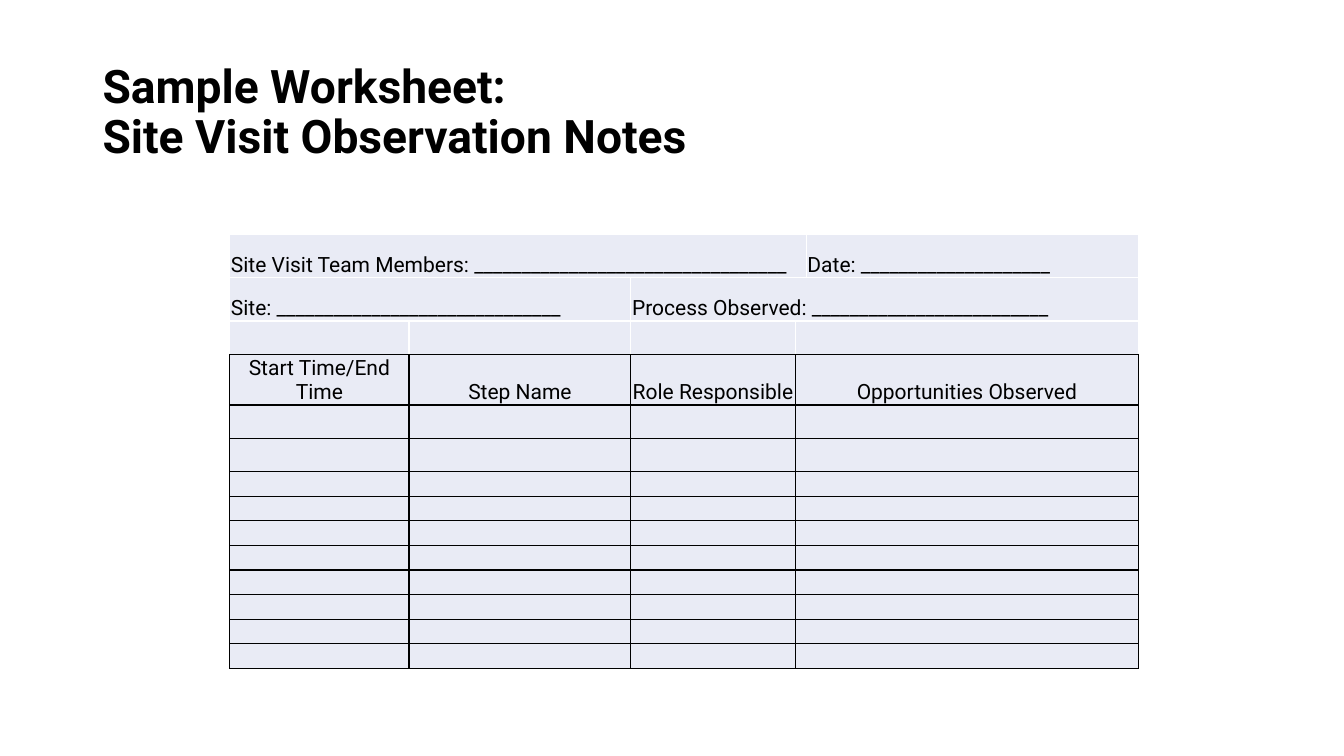
"""Build the site visit observation worksheet slide."""
from dataclasses import dataclass

from lxml import etree
from pptx import Presentation
from pptx.dml.color import RGBColor
from pptx.enum.text import MSO_ANCHOR, MSO_AUTO_SIZE, PP_ALIGN
from pptx.oxml.ns import qn
from pptx.slide import Slide
from pptx.table import Table, _Cell
from pptx.text.text import Font
from pptx.util import Cm, Pt

LEFT, CENTER = PP_ALIGN.LEFT, PP_ALIGN.CENTER
MIDDLE, BOTTOM = MSO_ANCHOR.MIDDLE, MSO_ANCHOR.BOTTOM
NO_FIT = MSO_AUTO_SIZE.NONE
BLACK = RGBColor(0x00, 0x00, 0x00)
WHITE = RGBColor(0xFF, 0xFF, 0xFF)
PALE = RGBColor(0xE9, 0xEB, 0xF5)
FACE = "Roboto"
WIDTHS = [4.52, 5.59, 4.14, 0.28, 8.38]
HEIGHTS = [1.09] * 2 + [0.84] * 4 + [0.62] * 8
GAP_ROW = 2


@dataclass
class Entry:
    """One worksheet label and the columns it covers."""

    row: int
    first: int
    last: int
    text: str
    align: PP_ALIGN = LEFT


ENTRIES = [
    Entry(0, 0, 3, "Site Visit Team Members: " + "_" * 33),
    Entry(0, 4, 4, "Date: " + "_" * 20),
    Entry(1, 0, 1, "Site: " + "_" * 30),
    Entry(1, 2, 4, "Process Observed: " + "_" * 25),
    Entry(3, 0, 0, "Start Time/End Time", CENTER),
    Entry(3, 1, 1, "Step Name", CENTER),
    Entry(3, 2, 2, "Role Responsible", CENTER),
    Entry(3, 3, 4, "Opportunities Observed", CENTER),
]


def set_font(font: Font, size: int, bold: bool = False) -> None:
    """Apply the shared typeface in black."""
    font.name, font.size, font.bold = FACE, Pt(size), bold
    font.color.rgb = BLACK


def add_edge(cell: _Cell, side: str, color: RGBColor) -> None:
    """Draw one solid cell border."""
    props = cell._tc.get_or_add_tcPr()
    line = etree.SubElement(props, qn(f"a:ln{side}"), w=str(Pt(1)))
    fill = etree.SubElement(line, qn("a:solidFill"))
    etree.SubElement(fill, qn("a:srgbClr"), val=str(color))


def style_cell(cell: _Cell, row: int, col: int) -> None:
    """Set the borders, fill, insets and empty-text size of a cell."""
    sides = "LRTB"
    if cell.is_spanned:
        sides = "RTB" if col == len(WIDTHS) - 1 else "TB"
    for side in sides:
        last = GAP_ROW - 1 if side == "B" else GAP_ROW
        add_edge(cell, side, WHITE if row <= last else BLACK)
    cell.fill.solid()
    cell.fill.fore_color.rgb = PALE
    cell.margin_left = cell.margin_right = cell.margin_top = Cm(0.03)
    cell.margin_bottom = Cm(0)
    cell.vertical_anchor = BOTTOM
    para = cell.text_frame.paragraphs[0]
    if not para.text:
        set_font(para.font, 12)
        etree.SubElement(para._p, qn("a:endParaRPr"), sz="1200")


def fill_table(table: Table) -> None:
    """Size, merge, label and style the worksheet."""
    table.first_row = table.horz_banding = False
    for col, width in zip(table.columns, WIDTHS):
        col.width = Cm(width)
    for row, height in zip(table.rows, HEIGHTS):
        row.height = Cm(height)
    for row in range(GAP_ROW, len(HEIGHTS)):
        table.cell(row, 3).merge(table.cell(row, 4))
    for entry in ENTRIES:
        cell = table.cell(entry.row, entry.first)
        if entry.last > entry.first and not cell.is_merge_origin:
            cell.merge(table.cell(entry.row, entry.last))
        cell.text = entry.text
        para = cell.text_frame.paragraphs[0]
        para.alignment = entry.align
        set_font(para.font, 15)
    for row in range(len(HEIGHTS)):
        for col in range(len(WIDTHS)):
            style_cell(table.cell(row, col), row, col)


def set_title(slide: Slide) -> None:
    """Place and format the title."""
    title = slide.shapes.title
    title.left, title.top = Cm(2.33), Cm(1.01)
    title.width, title.height = Cm(29.21), Cm(3.68)
    frame = title.text_frame
    frame.text = "Sample Worksheet:\vSite Visit Observation Notes"
    frame.word_wrap, frame.auto_size = True, NO_FIT
    frame.vertical_anchor = MIDDLE
    para = frame.paragraphs[0]
    para.alignment, para.line_spacing = LEFT, 0.9
    set_font(para.font, 33, True)


def main() -> None:
    """Create and save the slide."""
    deck = Presentation()
    deck.slide_width, deck.slide_height = Cm(33.87), Cm(19.05)
    slide = deck.slides.add_slide(deck.slide_layouts[5])
    set_title(slide)
    grid = slide.shapes.add_table(
        len(HEIGHTS), len(WIDTHS), Cm(5.79), Cm(5.91), Cm(sum(WIDTHS)), Cm(sum(HEIGHTS))
    )
    fill_table(grid.table)
    deck.save("out.pptx")


if __name__ == "__main__":
    main()
